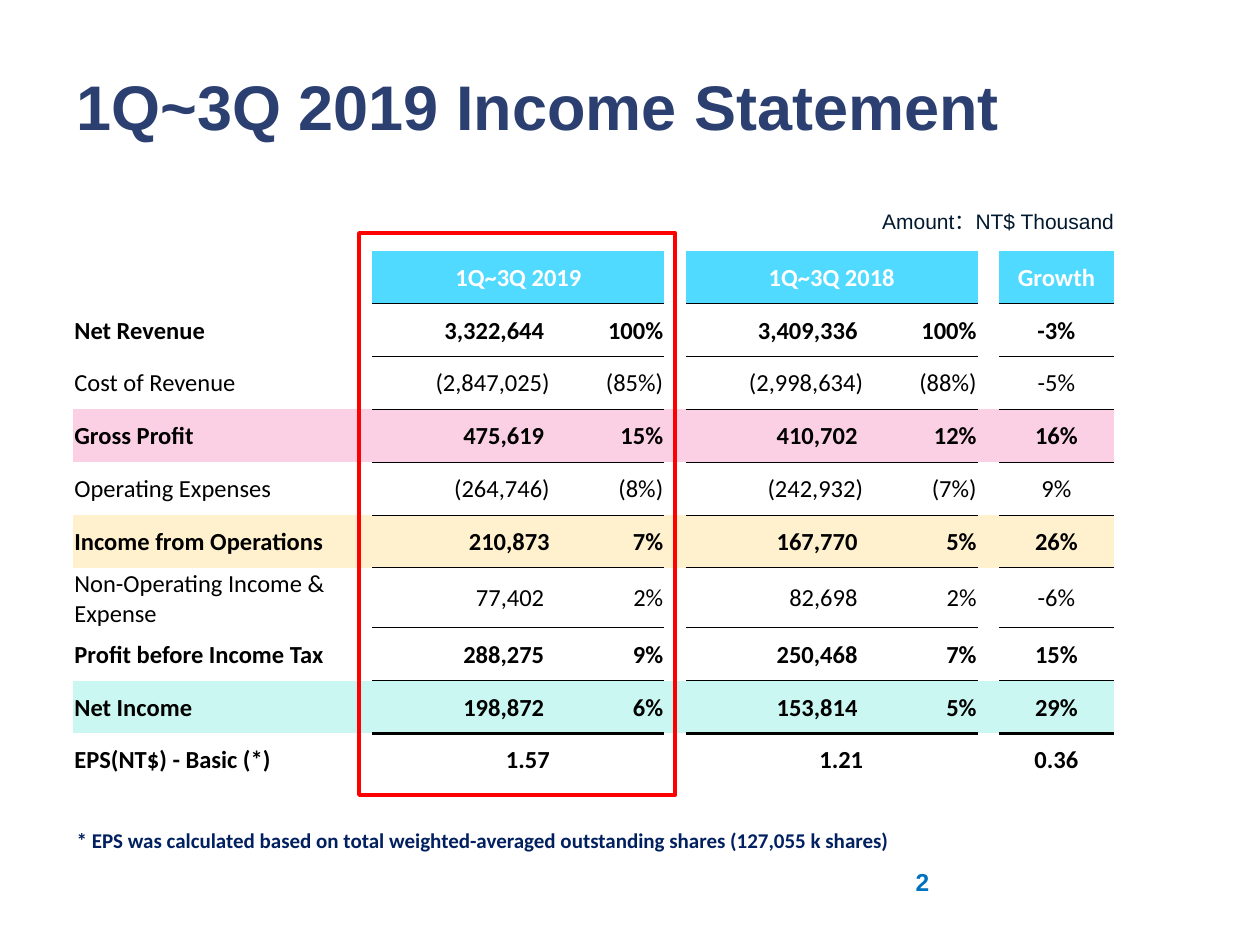
from lxml.etree import SubElement
from pptx import Presentation
from pptx.dml.color import RGBColor
from pptx.enum.shapes import MSO_SHAPE
from pptx.enum.text import MSO_ANCHOR, MSO_AUTO_SIZE, PP_ALIGN
from pptx.oxml.ns import qn
from pptx.util import Pt


class Theme:
    text, rule, white = "000000", "000000", "FFFFFF"
    title, unit, note, page = "2C3F71", "00192F", "002060", "0070C0"
    head, pink, cream, mint, frame = "51DAFF", "FBD0E4", "FFF1CE", "CAF7F1", "FF0000"
    sans, body = "Arial", "Calibri"
    big, mid, small = 36, 14, 12


LEFT, MID, RIGHT = PP_ALIGN.LEFT, PP_ALIGN.CENTER, PP_ALIGN.RIGHT

# Content: text, box, font, size, colour, bold, alignment, anchor, grow
NOTES = [
    ("1Q~3Q 2019 Income Statement", (36.7, 15.1, 617.8, 90), Theme.sans,
     Theme.big, Theme.title, True, LEFT, MSO_ANCHOR.MIDDLE, False),
    ("2", (516.2, 491.8, 167.8, 37.4), Theme.sans,
     Theme.mid, Theme.page, True, LEFT, MSO_ANCHOR.TOP, False),
    ("Amount：NT$ Thousand", (478.8, 115.9, 164.9, 21.6), Theme.sans,
     Theme.small, Theme.unit, False, RIGHT, MSO_ANCHOR.TOP, True),
    ("* EPS was calculated based on total weighted-averaged outstanding shares "
     "(127,055 k shares)", (36.7, 469.4, 504.7, 21.6), Theme.body,
     Theme.small, Theme.note, True, LEFT, MSO_ANCHOR.TOP, True),
]

# Label, five values, bold, fill, weight of the rule below
ROWS = [
    ("", ("1Q~3Q 2019", "", "1Q~3Q 2018", "", "Growth"), True, None, 1),
    ("Net Revenue", ("3,322,644 ", "100%", "3,409,336 ", "100%", "-3%"), True, None, 0),
    ("Cost of Revenue", ("(2,847,025)", "(85%)", "(2,998,634)", "(88%)", "-5%"),
     False, None, 0.5),
    ("Gross Profit", ("475,619 ", "15%", "410,702 ", "12%", "16%"), True, Theme.pink, 0),
    ("Operating Expenses", ("(264,746)", "(8%)", "(242,932)", "(7%)", "9%"),
     False, None, 0.5),
    ("Income from Operations", ("210,873", "7%", "167,770 ", "5%", "26%"),
     True, Theme.cream, 0),
    ("Non-Operating Income & Expense", ("77,402 ", "2%", "82,698 ", "2%", "-6%"),
     False, None, 0.5),
    ("Profit before Income Tax", ("288,275 ", "9%", "250,468 ", "7%", "15%"),
     True, None, 0.5),
    ("Net Income", ("198,872 ", "6%", "153,814 ", "5%", "29%"), True, Theme.mint, 2),
    ("EPS(NT$) - Basic (*)", ("1.57", "", "1.21", "", "0.36"), True, None, 0),
]
GROUP = (102.1, 64.8, 12.2)  # amount, percent, gap
COLS = (171, *GROUP, *GROUP, 65.5)
SLOTS = (1, 2, 4, 5, 7)  # columns that hold values
TALL = 30.2
NO_GRID = "{2D5ABB26-0587-4C30-8999-92F81FD0307C}"


def write(para, text, face, size, color, bold, align):
    para.alignment = align
    run = para.add_run()
    run.text = text
    font = run.font
    font.name, font.size, font.bold = face, Pt(size), bold
    font.color.rgb = RGBColor.from_string(color)


def edge(cell, tag, width):
    line = SubElement(cell._tc.get_or_add_tcPr(), qn(tag), w=str(Pt(width)))
    fill = SubElement(line, qn("a:solidFill"))
    SubElement(fill, qn("a:srgbClr"), val=Theme.rule)


deck = Presentation()
deck.slide_width, deck.slide_height = Pt(720), Pt(540)
slide = deck.slides.add_slide(deck.slide_layouts[6])
shapes = slide.shapes

# Title, page number, unit and footnote
for text, box, face, size, color, bold, align, anchor, grow in NOTES:
    frame = shapes.add_textbox(*map(Pt, box)).text_frame
    frame.word_wrap = True
    frame.vertical_anchor = anchor
    if grow:
        frame.auto_size = MSO_AUTO_SIZE.SHAPE_TO_FIT_TEXT
    write(frame.paragraphs[0], text, face, size, color, bold, align)

# Income table
table = shapes.add_table(len(ROWS), len(COLS), Pt(41.8), Pt(143.3),
                         Pt(sum(COLS)), Pt(TALL * len(ROWS))).table
table.first_row = table.horz_banding = False
table._tbl.tblPr.find(qn("a:tableStyleId")).text = NO_GRID
for col, width in zip(table.columns, COLS):
    col.width = Pt(width)
for left in (1, 4):
    table.cell(0, left).merge(table.cell(0, left + 1))

above = 0
for r, (label, values, bold, tint, below) in enumerate(ROWS):
    table.rows[r].height = Pt(TALL)
    words = {0: label, **dict(zip(SLOTS, values))}
    for c in range(len(COLS)):
        cell = table.cell(r, c)
        cell.vertical_anchor = MSO_ANCHOR.MIDDLE
        cell.margin_left = cell.margin_right = cell.margin_top = Pt(0.7)
        cell.margin_bottom = 0
        if c in SLOTS:
            for tag, width in (("a:lnT", above), ("a:lnB", below)):
                if width:
                    edge(cell, tag, width)
        shade = Theme.head if r == 0 and c in SLOTS else tint
        if shade:
            cell.fill.solid()
            cell.fill.fore_color.rgb = RGBColor.from_string(shade)
        else:
            cell.fill.background()
        if words.get(c):
            align = LEFT if c == 0 else MID if r == 0 or c == SLOTS[-1] else RIGHT
            write(cell.text_frame.paragraphs[0], words[c], Theme.body, Theme.mid,
                  Theme.text if r else Theme.white, bold, align)
    above = below

# Frame around the current year
mark = shapes.add_shape(MSO_SHAPE.RECTANGLE, Pt(205.2), Pt(133.2), Pt(180.7), Pt(321.1))
mark.shadow.inherit = False
mark.fill.background()
mark.line.color.rgb = RGBColor.from_string(Theme.frame)
mark.line.width = Pt(2.25)

deck.save("out.pptx")
